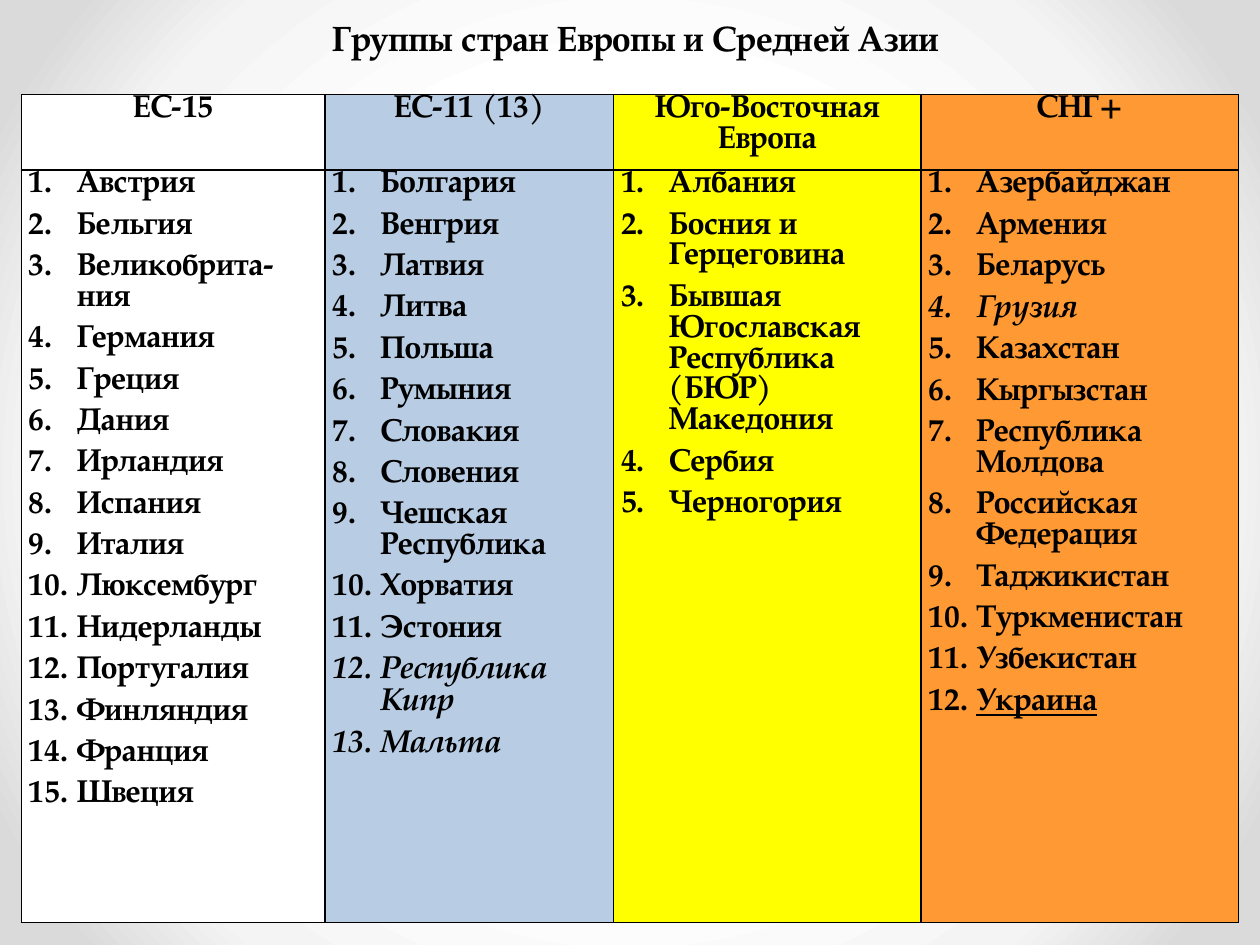
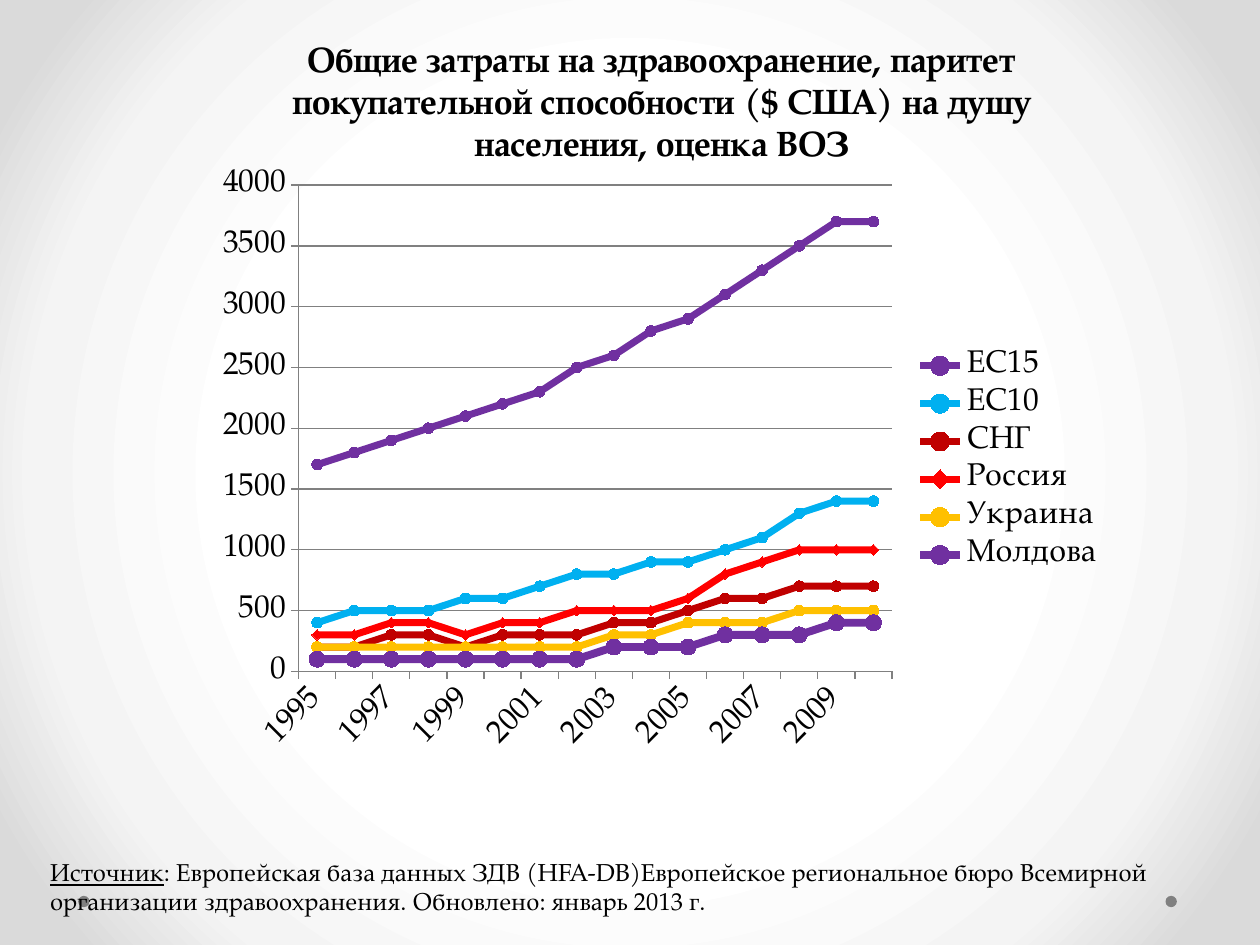
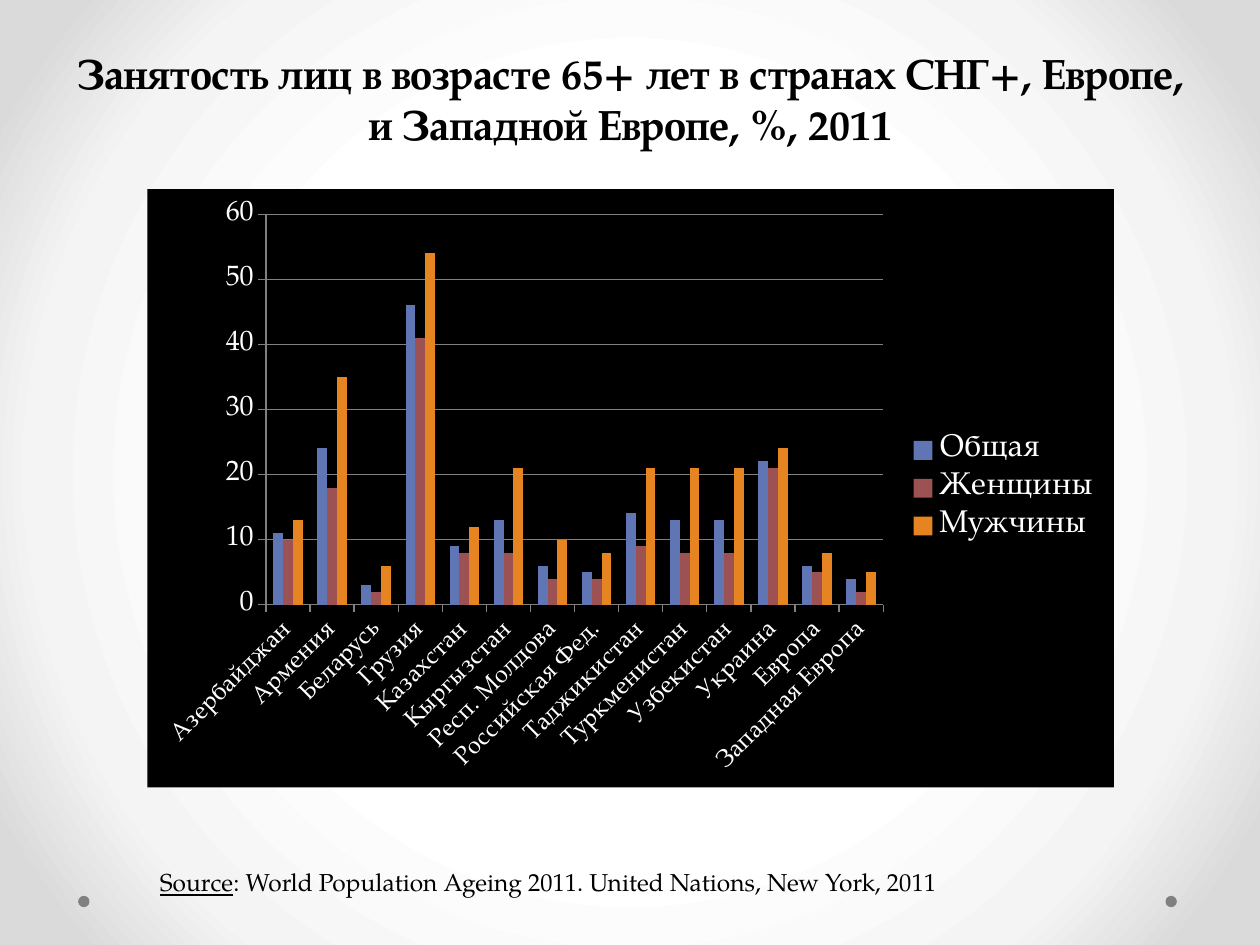
from dataclasses import dataclass

from pptx import Presentation
from pptx.chart.data import CategoryChartData
from pptx.dml.color import RGBColor
from pptx.enum.chart import (XL_CHART_TYPE, XL_LEGEND_POSITION,
                             XL_MARKER_STYLE, XL_TICK_MARK)
from pptx.enum.shapes import MSO_SHAPE
from pptx.enum.text import MSO_ANCHOR, PP_ALIGN
from pptx.oxml import parse_xml
from pptx.oxml.ns import nsdecls, qn
from pptx.util import Inches, Pt

LINE, COLUMN = XL_CHART_TYPE.LINE_MARKERS, XL_CHART_TYPE.COLUMN_CLUSTERED
CIRCLE, DIAMOND = XL_MARKER_STYLE.CIRCLE, XL_MARKER_STYLE.DIAMOND
RIGHT, OUTSIDE = XL_LEGEND_POSITION.RIGHT, XL_TICK_MARK.OUTSIDE
OVAL, TOP = MSO_SHAPE.OVAL, MSO_ANCHOR.TOP
LEFT, CENTER = PP_ALIGN.LEFT, PP_ALIGN.CENTER

FONT = "TeX Gyre Pagella"
COLORS = {
    "black": "000000", "white": "FFFFFF", "pale": "F4F4F4", "edge": "DADADA",
    "gray": "808080", "sky": "B8CCE4", "yellow": "FFFF00", "orange": "FF9933",
    "purple": "7030A0", "cyan": "00B0F0", "dark": "C00000", "red": "FF0000",
    "gold": "FFC000", "ocean": "0070C0", "blue": "6076B4", "brick": "9C5252",
    "amber": "E68422",
}
GLOW = ((50, "white"), (76, "pale"), (92, "edge"))


@dataclass
class Group:
    name: str
    fill: str
    width: float
    lands: list[str]
    slant: tuple[str, ...] = ()
    under: tuple[str, ...] = ()


@dataclass
class Series:
    name: str
    color: str
    vals: list[int]
    mark: str = "white"
    shape: XL_MARKER_STYLE = CIRCLE
    size: int = 6
    width: float = 4


@dataclass
class Graph:
    kind: XL_CHART_TYPE
    box: tuple[float, ...]
    plot: tuple[float, ...]  # left, top, width, height inside the box
    cats: list[str]
    rows: list[Series]
    top: int
    step: int
    ink: str = "black"
    fill: str | None = None
    cat_size: int = 18
    val_size: int = 18


GROUPS = [
    Group("ЕС-15", "white", 2.41,
          ["Австрия", "Бельгия", "Великобрита-ния", "Германия", "Греция",
           "Дания", "Ирландия", "Испания", "Италия", "Люксембург",
           "Нидерланды", "Португалия", "Финляндия", "Франция", "Швеция"]),
    Group("ЕС-11 (13)", "sky", 2.29,
          ["Болгария", "Венгрия", "Латвия", "Литва", "Польша", "Румыния",
           "Словакия", "Словения", "Чешская Республика", "Хорватия",
           "Эстония", "Республика Кипр", "Мальта"],
          slant=("Республика Кипр", "Мальта")),
    Group("Юго-Восточная Европа", "yellow", 2.44,
          ["Албания", "Босния и Герцеговина",
           "Бывшая Югославская Республика (БЮР) Македония", "Сербия",
           "Черногория"]),
    Group("СНГ+", "orange", 2.52,
          ["Азербайджан", "Армения", "Беларусь", "Грузия", "Казахстан",
           "Кыргызстан", "Республика Молдова", "Российская Федерация",
           "Таджикистан", "Туркменистан", "Узбекистан", "Украина"],
          slant=("Грузия",), under=("Украина",)),
]

COSTS = Graph(
    LINE, (1.62, 1.25, 7.25, 4.81), (0.75, 0.22, 4.71, 3.86),
    [str(year) for year in range(1995, 2011)],
    [
        Series("ЕС15", "purple",
               [1700, 1800, 1900, 2000, 2100, 2200, 2300, 2500,
                2600, 2800, 2900, 3100, 3300, 3500, 3700, 3700], "ocean"),
        Series("ЕС10", "cyan",
               [400, 500, 500, 500, 600, 600, 700, 800,
                800, 900, 900, 1000, 1100, 1300, 1400, 1400]),
        Series("СНГ", "dark",
               [200, 200, 300, 300, 200, 300, 300, 300,
                400, 400, 500, 600, 600, 700, 700, 700], "red"),
        Series("Россия", "red",
               [300, 300, 400, 400, 300, 400, 400, 500,
                500, 500, 600, 800, 900, 1000, 1000, 1000], "gold", DIAMOND),
        Series("Украина", "gold",
               [200, 200, 200, 200, 200, 200, 200, 200,
                300, 300, 400, 400, 400, 500, 500, 500], "yellow"),
        Series("Молдова", "purple",
               [100, 100, 100, 100, 100, 100, 100, 100,
                200, 200, 200, 300, 300, 300, 400, 400], "yellow",
               size=9, width=4.5),
    ], top=4000, step=500)

JOBS = Graph(
    COLUMN, (1.17, 1.5, 7.67, 4.75), (0.94, 0.2, 4.9, 3.1),
    ["Азербайджан", "Армения", "Беларусь", "Грузия", "Казахстан",
     "Кыргызстан", "Респ. Молдова", "Российская Фед.", "Таджикистан",
     "Туркменистан", "Узбекистан", "Украина", "Европа", "Западная Европа"],
    [
        Series("Общая", "blue",
               [11, 24, 3, 46, 9, 13, 6, 5, 14, 13, 13, 22, 6, 4]),
        Series("Женщины", "brick",
               [10, 18, 2, 41, 8, 8, 4, 4, 9, 8, 8, 21, 5, 2]),
        Series("Мужчины", "amber",
               [13, 35, 6, 54, 12, 21, 10, 8, 21, 21, 21, 24, 8, 5]),
    ], top=60, step=10, ink="white", fill="black", cat_size=14, val_size=16)


def rgb(name: str) -> RGBColor:
    return RGBColor.from_string(COLORS[name])


def paint(fill, name: str) -> None:
    fill.solid()
    fill.fore_color.rgb = rgb(name)


def style(font, size: float, color: str = "black", bold: bool = False,
          italic: bool = False, under: bool = False) -> None:
    font.name, font.size = FONT, Pt(size)
    font.bold, font.italic, font.underline = bold, italic, under
    font.color.rgb = rgb(color)


def write(para, text: str, align=LEFT, **form) -> None:
    """Add one formatted run to a paragraph."""
    para.alignment = align
    run = para.add_run()
    run.text = text
    style(run.font, **form)


def add_text(slide, box: tuple[float, ...]):
    """Add a wrapping text box and return its first paragraph."""
    frame = slide.shapes.add_textbox(*map(Inches, box)).text_frame
    frame.word_wrap = True
    return frame.paragraphs[0]


def add_title(slide, box: tuple[float, ...], text: str, size: int) -> None:
    write(add_text(slide, box), text, align=CENTER, size=size, bold=True)


def add_note(slide, box: tuple[float, ...], label: str, text: str) -> None:
    para = add_text(slide, box)
    write(para, label, size=14, under=True)
    write(para, text, size=14)


def set_back(master) -> None:
    """Give the master its round gradient."""
    master.background.fill.solid()
    stops = "".join(f'<a:gs pos="{at * 1000}"><a:srgbClr val="{COLORS[name]}"/>'
                    "</a:gs>" for at, name in GLOW)
    grad = parse_xml(
        f'<a:gradFill {nsdecls("a")} rotWithShape="1"><a:gsLst>{stops}</a:gsLst>'
        '<a:path path="circle"><a:fillToRect l="50000" t="50000" r="50000" '
        'b="50000"/></a:path></a:gradFill>')
    back = master.element.find(f".//{qn('p:bgPr')}")
    back.replace(back[0], grad)


def add_slide(prs):
    """Add a blank slide with the two corner dots."""
    slide = prs.slides.add_slide(prs.slide_layouts[6])
    for left in (9.25, 0.62):
        dot = slide.shapes.add_shape(OVAL, *map(Inches, (left, 7.11, 0.09, 0.09)))
        dot.shadow.inherit = False
        paint(dot.fill, "gray")
        dot.line.fill.background()
    return slide


def set_cell(cell, fill: str) -> None:
    """Set fill, margins and borders of a cell."""
    paint(cell.fill, fill)
    cell.margin_left = cell.margin_right = Inches(0.06)
    cell.margin_top = cell.margin_bottom = 0
    cell.vertical_anchor = TOP
    props = cell._tc.get_or_add_tcPr()
    for spot, side in enumerate("LRTB"):
        props.insert(spot, parse_xml(
            f'<a:ln{side} {nsdecls("a")} w="{Pt(1)}"><a:solidFill>'
            f'<a:srgbClr val="{COLORS["black"]}"/></a:solidFill></a:ln{side}>'))


def set_number(para) -> None:
    """Turn a paragraph into a numbered item."""
    para.space_after = Pt(6)
    props = para._p.get_or_add_pPr()
    indent = Inches(0.38)
    props.set("marL", str(indent))
    props.set("indent", str(-indent))
    props.append(parse_xml(f'<a:buAutoNum {nsdecls("a")} type="arabicPeriod"/>'))


def add_groups(slide) -> None:
    frame = slide.shapes.add_table(
        2, len(GROUPS), *map(Inches, (0.17, 0.75, 9.67, 6.57)))
    table = frame.table
    table.first_row = table.horz_banding = False
    for row, height in zip(table.rows, (0.6, 5.97)):
        row.height = Inches(height)
    for col, group in enumerate(GROUPS):
        table.columns[col].width = Inches(group.width)
        head, body = table.cell(0, col), table.cell(1, col)
        for cell in (head, body):
            set_cell(cell, group.fill)
        write(head.text_frame.paragraphs[0], group.name, align=CENTER,
              size=18, bold=True)
        frame = body.text_frame
        for spot, land in enumerate(group.lands):
            para = frame.add_paragraph() if spot else frame.paragraphs[0]
            write(para, land, size=18, bold=True, italic=land in group.slant,
                  under=land in group.under)
            set_number(para)


def set_area(chart, graph: Graph) -> None:
    """Place the plot and fill the areas behind it."""
    root = chart.element
    area = root.find(f".//{qn('c:plotArea')}")
    for old in area.findall(qn("c:layout")):
        area.remove(old)
    wide, high = graph.box[2:]
    spots = "".join(
        f'<c:{key} val="{val / full:.4f}"/>'
        for key, val, full in zip("xywh", graph.plot, (wide, high) * 2))
    area.insert(0, parse_xml(
        f'<c:layout {nsdecls("c")}><c:manualLayout><c:layoutTarget val="inner"/>'
        '<c:xMode val="edge"/><c:yMode val="edge"/>'
        f'{spots}</c:manualLayout></c:layout>'))
    fill = "<a:noFill/>"
    if graph.fill:
        fill = f'<a:solidFill><a:srgbClr val="{COLORS[graph.fill]}"/></a:solidFill>'
    look = f'<c:spPr {nsdecls("c", "a")}>{fill}<a:ln><a:noFill/></a:ln></c:spPr>'
    area.append(parse_xml(look))
    root.find(qn("c:txPr")).addprevious(parse_xml(look))
    turn = root.find(f".//{qn('c:catAx')}//{qn('a:bodyPr')}")
    turn.set("rot", str(-45 * 60000))


def set_axes(chart, graph: Graph) -> None:
    cat, val = chart.category_axis, chart.value_axis
    for axis, size in ((cat, graph.cat_size), (val, graph.val_size)):
        axis.major_tick_mark = OUTSIDE
        axis.format.line.color.rgb = rgb("gray")
        style(axis.tick_labels.font, size, graph.ink)
    cat.has_major_gridlines = False
    val.has_major_gridlines = True
    val.major_gridlines.format.line.color.rgb = rgb("gray")
    val.minimum_scale, val.maximum_scale = 0, graph.top
    val.major_unit = graph.step


def add_graph(slide, graph: Graph) -> None:
    data = CategoryChartData(number_format="0")
    data.categories = graph.cats
    for row in graph.rows:
        data.add_series(row.name, row.vals)
    chart = slide.shapes.add_chart(
        graph.kind, *map(Inches, graph.box), data).chart
    chart.has_title = False
    style(chart.font, 18, graph.ink)
    chart.has_legend = True
    chart.legend.position = RIGHT
    chart.legend.include_in_layout = False
    style(chart.legend.font, 18, graph.ink)
    set_axes(chart, graph)
    plot = chart.plots[0]
    plot.vary_by_categories = False
    if graph.kind == COLUMN:
        plot.gap_width = 150
    for item, row in zip(plot.series, graph.rows):
        if graph.kind == COLUMN:
            paint(item.format.fill, row.color)
            continue
        item.smooth = False
        item.format.line.color.rgb = rgb(row.color)
        item.format.line.width = Pt(row.width)
        item.marker.style, item.marker.size = row.shape, row.size
        paint(item.marker.format.fill, row.mark)
        item.marker.format.line.color.rgb = rgb(row.color)
    set_area(chart, graph)


def main() -> None:
    prs = Presentation()
    prs.slide_width, prs.slide_height = Inches(10), Inches(7.5)
    set_back(prs.slide_master)

    slide = add_slide(prs)
    add_groups(slide)
    add_title(slide, (0.42, 0.08, 9.25, 0.44),
              "Группы стран Европы и Средней Азии", 20)

    slide = add_slide(prs)
    add_graph(slide, COSTS)
    add_title(slide, (1.5, 0.25, 7.5, 1.11),
              "Общие затраты на здравоохранение, паритет покупательной "
              "способности ($ CША) на душу населения, оценка ВОЗ", 20)
    add_note(slide, (0.3, 6.75, 9.33, 0.57), "Источник",
             ": Европейская база данных ЗДВ (HFA-DB)Европейское региональное "
             "бюро Всемирной организации здравоохранения. "
             "Обновлено: январь 2013 г.")

    slide = add_slide(prs)
    add_graph(slide, JOBS)
    add_title(slide, (0.42, 0.33, 9.17, 0.91),
              "Занятость лиц в возрасте 65+ лет в странах СНГ+, Европе, "
              "и Западной Европе, %, 2011", 24)
    add_note(slide, (1.17, 6.83, 7, 0.34), "Source",
             ": World Population Ageing 2011. United Nations, New York, 2011")
    prs.save("out.pptx")


if __name__ == "__main__":
    main()
